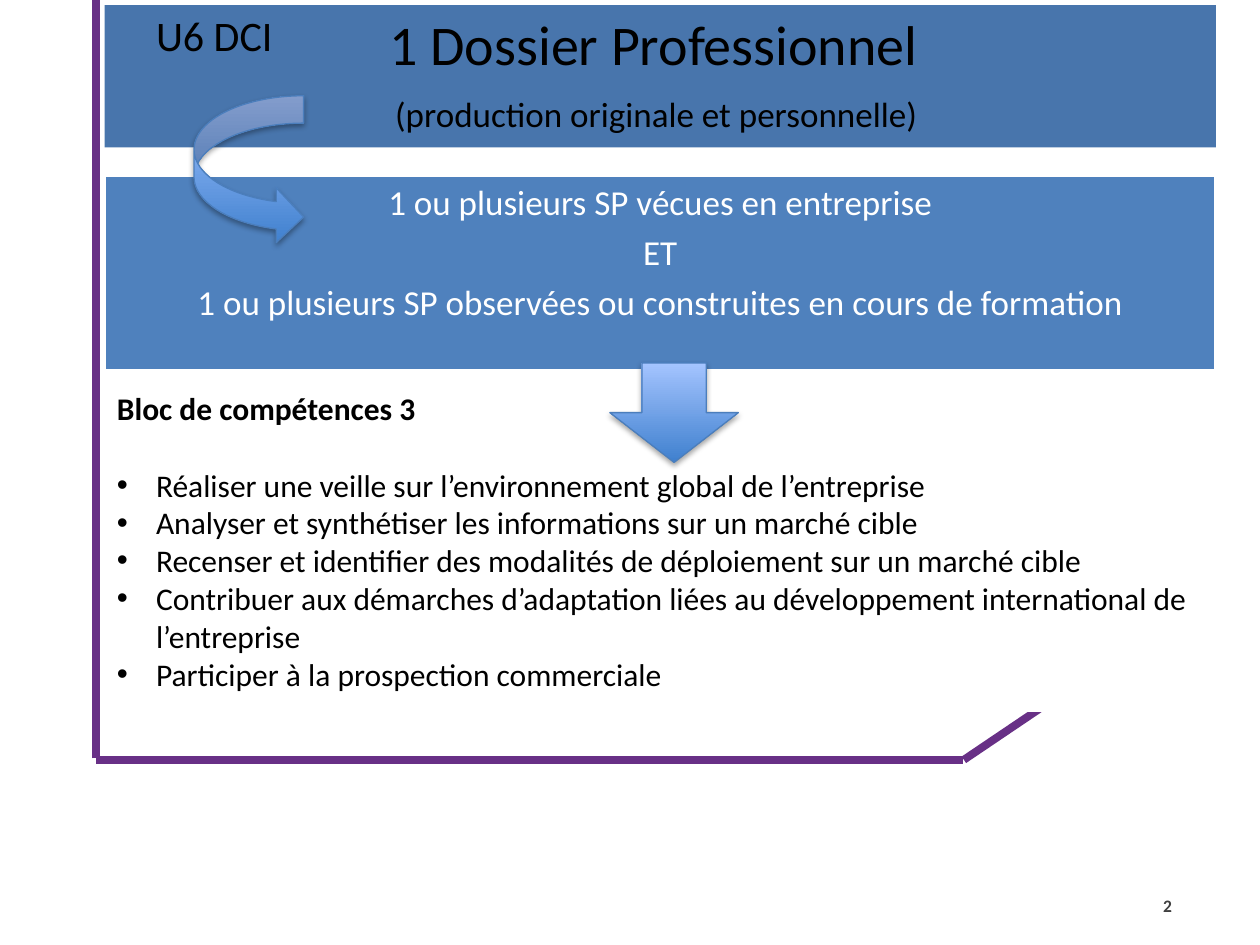
from lxml import etree
from pptx import Presentation
from pptx.dml.color import RGBColor
from pptx.enum.shapes import MSO_CONNECTOR, MSO_SHAPE
from pptx.enum.text import MSO_ANCHOR as Anchor, PP_ALIGN as Align
from pptx.oxml import parse_xml
from pptx.oxml.ns import nsdecls, qn
from pptx.util import Pt

PX = 9144  # 100 px to the inch
BLACK = RGBColor(0x00, 0x00, 0x00)
WHITE = RGBColor(0xFF, 0xFF, 0xFF)
GREY = RGBColor(0x40, 0x40, 0x40)
PURPLE = RGBColor(0x68, 0x30, 0x86)
HEADER_BLUE = RGBColor(0x48, 0x75, 0xAC)
PANEL_BLUE = RGBColor(0x4F, 0x81, 0xBD)
ARROW_DARK = RGBColor(0x3F, 0x80, 0xCE)
ARROW_LIGHT = RGBColor(0xA4, 0xC4, 0xFF)
ARROW_EDGE = RGBColor(0x4B, 0x7E, 0xBC)

deck = Presentation()
deck.slide_width, deck.slide_height = 1000 * PX, 750 * PX
page = deck.slides.add_slide(deck.slide_layouts[6])
shapes = page.shapes


def scaled(*lengths):
    return [length * PX for length in lengths]


def write(box, lines, color, align=Align.LEFT, anchor=Anchor.TOP, inset=None, bold=False):
    """Fill a box with (text, point size) lines and return its paragraphs."""
    frame = box.text_frame
    frame.word_wrap = True
    frame.vertical_anchor = anchor
    if inset is not None:
        frame.margin_left = frame.margin_right = inset * PX
        frame.margin_top = frame.margin_bottom = inset * PX
    for index, (text, size) in enumerate(lines):
        para = frame.add_paragraph() if index else frame.paragraphs[0]
        para.alignment = align
        span = para.add_run()
        span.text = text
        span.font.name = "Calibri"
        span.font.size = Pt(size)
        span.font.bold = bold
        span.font.color.rgb = color
    return frame.paragraphs


# Purple frame
for ends in [(76, 603, 764, 603), (765, 603, 931, 491), (76, 602, 76, 0)]:
    border = shapes.add_connector(MSO_CONNECTOR.STRAIGHT, *scaled(*ends))
    border.line.color.rgb = PURPLE
    border.line.width = Pt(4.5)
    etree.SubElement(border._element.spPr, qn("a:effectLst"))

page_number = shapes.add_textbox(*scaled(896, 699, 44, 40))
write(page_number, [("2", 10)], GREY, Align.RIGHT, Anchor.MIDDLE, bold=True)

# Stacked panels: top, height, fill, edge, text colour, anchor, inset, lines
panels = [
    (4, 113, HEADER_BLUE, None, BLACK, Anchor.MIDDLE, 13,
     [("1 Dossier Professionnel ", 32),
      ("(production originale et personnelle) ", 20)]),
    (139, 155, PANEL_BLUE, WHITE, WHITE, Anchor.TOP, 8,
     [("1 ou plusieurs SP vécues en entreprise", 20),
      ("ET", 20),
      ("1 ou plusieurs SP observées ou construites en cours de formation", 20)]),
    (367, 198, WHITE, None, BLACK, Anchor.TOP, 8, []),
]
for top, height, fill, edge, color, anchor, inset, lines in panels:
    panel = shapes.add_shape(MSO_SHAPE.RECTANGLE, *scaled(83, top, 882, height))
    panel.shadow.inherit = False
    panel.fill.solid()
    panel.fill.fore_color.rgb = fill
    if edge is None:
        panel.line.fill.background()
    else:
        panel.line.color.rgb = edge
        panel.line.width = Pt(2)
    if lines:
        paras = write(panel, lines, color, Align.CENTER, anchor, inset)
        for para, (text, size) in zip(paras, lines):
            para.line_spacing = 0.9
            para.space_after = Pt(0.35 * size)

# Skills list
skills = [
    "Réaliser une veille sur l’environnement global de l’entreprise",
    "Analyser et synthétiser les informations sur un marché cible",
    "Recenser et identifier des modalités de déploiement sur un marché cible",
    "Contribuer aux démarches d’adaptation liées au développement international de l’entreprise",
    "Participer à la prospection commerciale",
]
skills_box = shapes.add_textbox(*scaled(83, 304, 882, 252))
heading, *items = write(
    skills_box, [(text, 18) for text in ["Bloc de compétences 3", *skills]], BLACK)
heading.runs[0].font.bold = True
heading.space_after = Pt(22)
for item in items:
    properties = item._p.get_or_add_pPr()
    properties.set("marL", str(31 * PX))
    properties.set("indent", str(-31 * PX))
    etree.SubElement(properties, qn("a:buFont"), typeface="Arial")
    etree.SubElement(properties, qn("a:buChar"), char="•")

# Arrows linking the panels
for kind, place in [(MSO_SHAPE.DOWN_ARROW, (484, 288, 102, 79)),
                    (MSO_SHAPE.CURVED_RIGHT_ARROW, (154, 76, 87, 118))]:
    arrow = shapes.add_shape(kind, *scaled(*place))
    arrow.fill.gradient()
    arrow.fill.gradient_angle = 90
    for stop, color, position in zip(arrow.fill.gradient_stops,
                                     (ARROW_DARK, ARROW_LIGHT), (0, 1)):
        stop.color.rgb = color
        stop.position = position
    arrow.line.color.rgb = ARROW_EDGE
    arrow.line.width = Pt(0.75)
    arrow.shadow.inherit = False
    arrow._element.spPr.find(qn("a:effectLst")).append(parse_xml(
        f'<a:outerShdw {nsdecls("a")} blurRad="40000" dist="23000" dir="5400000" '
        'rotWithShape="0"><a:srgbClr val="000000"><a:alpha val="35000"/>'
        '</a:srgbClr></a:outerShdw>'))

unit_label = shapes.add_textbox(*scaled(114, 3, 126, 50))
write(unit_label, [("U6 DCI", 24)], BLACK)

deck.save("out.pptx")
